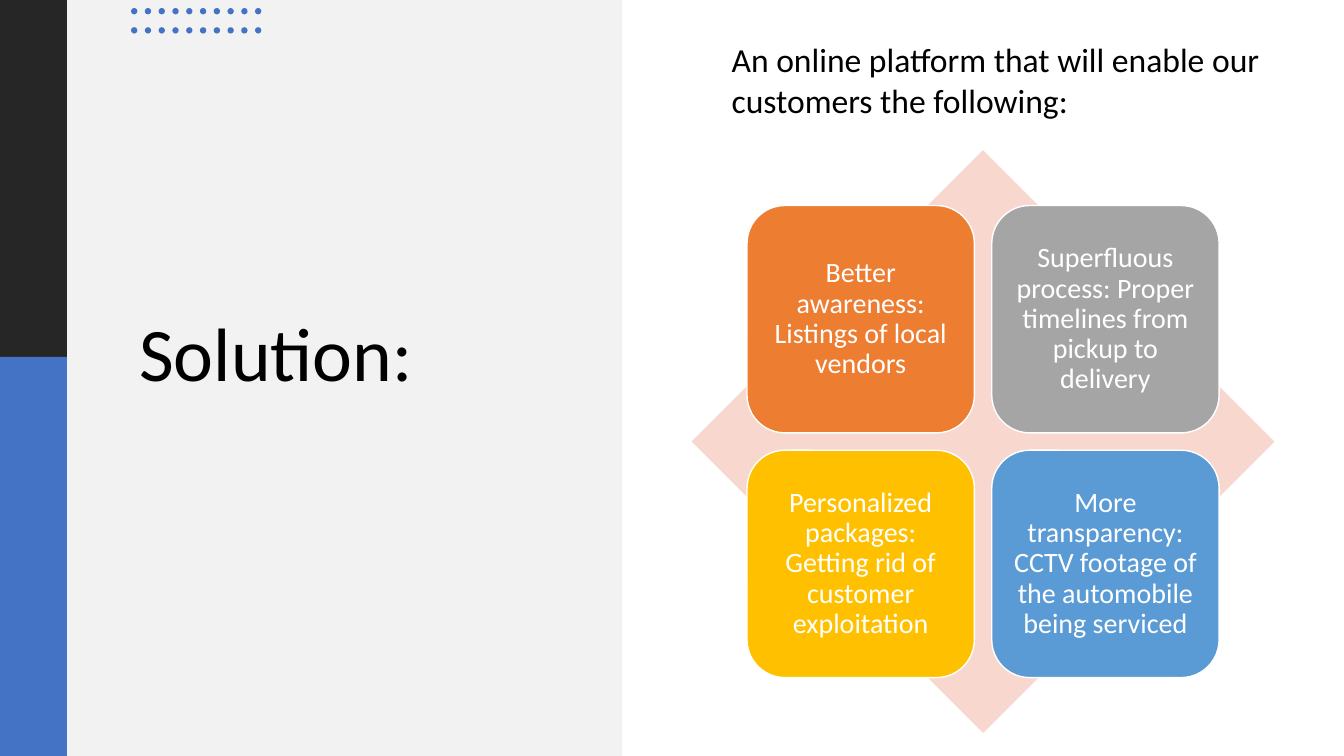
"""Build the "Solution" slide: a title panel beside a four-card diamond matrix."""
from dataclasses import dataclass

from pptx import Presentation
from pptx.dml.color import RGBColor
from pptx.enum import shapes, text
from pptx.util import Pt


@dataclass(frozen=True)
class Theme:
    """Colours, font and type sizes of the slide."""
    font: str = "Calibri"
    title_size: int = 54
    intro_size: int = 24
    card_size: int = 20
    black: str = "000000"
    white: str = "FFFFFF"
    dark: str = "262626"
    blue: str = "4472C4"
    panel: str = "F2F2F2"
    diamond: str = "F8D7CE"
    cards: tuple = ("ED7D31", "A5A5A5", "FFC000", "5B9BD5")


THEME = Theme()
SHAPE = shapes.MSO_SHAPE
CARD_TEXTS = (
    "Better awareness: Listings of local vendors",
    "Superfluous process: Proper timelines from pickup to delivery",
    "Personalized packages: Getting rid of customer exploitation",
    "More transparency: CCTV footage of the automobile being serviced",
)


def add_block(container, kind, left, top, width, height, fill):
    """Add a flat filled shape without outline or shadow."""
    shape = container.add_shape(kind, Pt(left), Pt(top), Pt(width), Pt(height))
    shape.shadow.inherit = False
    shape.fill.solid()
    shape.fill.fore_color.rgb = RGBColor.from_string(fill)
    shape.line.fill.background()
    return shape


def write_text(shape, wording, size, color, alignment, line_spacing, anchor):
    """Fill a shape with one styled, wrapping paragraph."""
    frame = shape.text_frame
    frame.text = wording
    frame.word_wrap = True
    frame.auto_size = text.MSO_AUTO_SIZE.NONE
    frame.vertical_anchor = anchor
    paragraph = frame.paragraphs[0]
    paragraph.alignment = alignment
    paragraph.line_spacing = line_spacing
    paragraph.font.name = THEME.font
    paragraph.font.size = Pt(size)
    paragraph.font.color.rgb = RGBColor.from_string(color)


def add_panels(slide):
    """Draw the two-colour side strip and the pale title panel."""
    strip, split = 47.9, 255
    for left, top, width, height, fill in (
        (0, 0, strip, split, THEME.dark),
        (0, split, strip, 540 - split, THEME.blue),
        (strip, 0, 396.5, 540, THEME.panel),
    ):
        add_block(slide.shapes, SHAPE.RECTANGLE, left, top, width, height, fill)


def place_title(slide, wording):
    """Position the title placeholder in front of the panels."""
    title = slide.shapes.title
    title.left, title.top, title.width, title.height = Pt(92.2), Pt(94.3), Pt(296.6), Pt(321)
    write_text(title, wording, THEME.title_size, THEME.black,
               text.PP_ALIGN.LEFT, 0.9, text.MSO_ANCHOR.MIDDLE)
    slide.shapes.element.append(title.element)


def add_dots(slide):
    """Draw the grouped grid of small dots, ten across and two down."""
    group = slide.shapes.add_group_shape()
    for row in range(2):
        for column in range(10):
            add_block(group.shapes, SHAPE.OVAL, 93.6 + 9.84 * column,
                      5.75 + 13.7 * row, 4.5, 4.5, THEME.blue)


def add_matrix(slide):
    """Draw the diamond and the two-by-two grid of cards over it."""
    group = slide.shapes.add_group_shape()
    add_block(group.shapes, SHAPE.DIAMOND, 494, 107.2, 416.4, 416.4, THEME.diamond)
    for index, (wording, fill) in enumerate(zip(CARD_TEXTS, THEME.cards)):
        row, column = divmod(index, 2)
        card = add_block(group.shapes, SHAPE.ROUNDED_RECTANGLE, 533.6 + 174.8 * column,
                         146.8 + 174.8 * row, 162.4, 162.4, fill)
        card.line.color.rgb = RGBColor.from_string(THEME.white)
        card.line.width = Pt(1)
        write_text(card, wording, THEME.card_size, THEME.white,
                   text.PP_ALIGN.CENTER, 0.9, text.MSO_ANCHOR.MIDDLE)
        frame = card.text_frame
        frame.margin_left = frame.margin_right = Pt(6)
        frame.margin_top = frame.margin_bottom = Pt(6)


def add_intro(slide, wording):
    """Add the sentence above the matrix."""
    box = slide.shapes.add_textbox(Pt(515.5), Pt(24.5), Pt(429.8), Pt(65.5))
    write_text(box, wording, THEME.intro_size, THEME.black,
               text.PP_ALIGN.LEFT, 1.0, text.MSO_ANCHOR.TOP)


def main():
    """Assemble and save the presentation."""
    presentation = Presentation()
    presentation.slide_width, presentation.slide_height = Pt(960), Pt(540)
    slide = presentation.slides.add_slide(presentation.slide_layouts.get_by_name("Title Only"))
    add_panels(slide)
    place_title(slide, "Solution:")
    add_dots(slide)
    add_matrix(slide)
    add_intro(slide, "An online platform that will enable our customers the following:")
    presentation.save("out.pptx")


if __name__ == "__main__":
    main()
